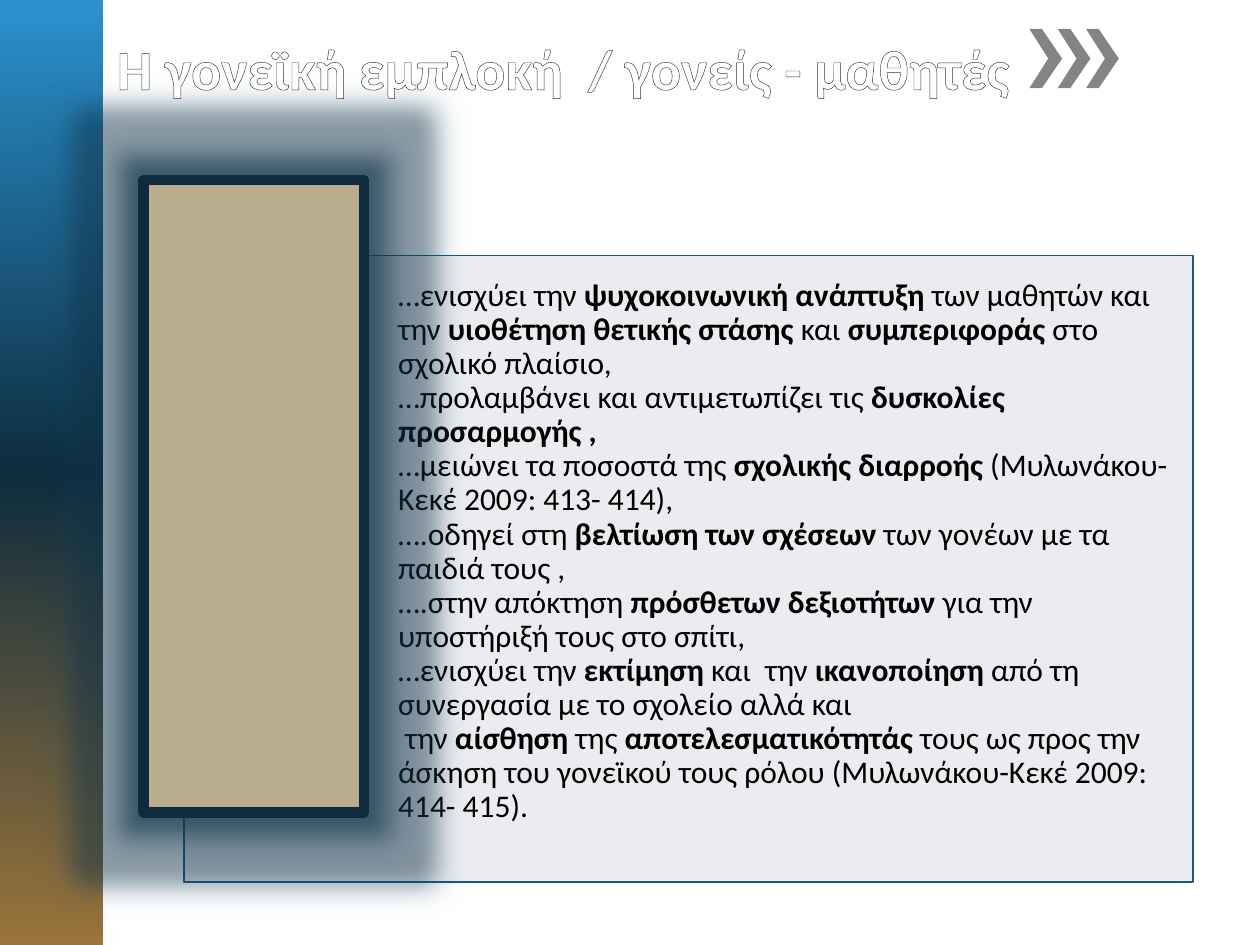
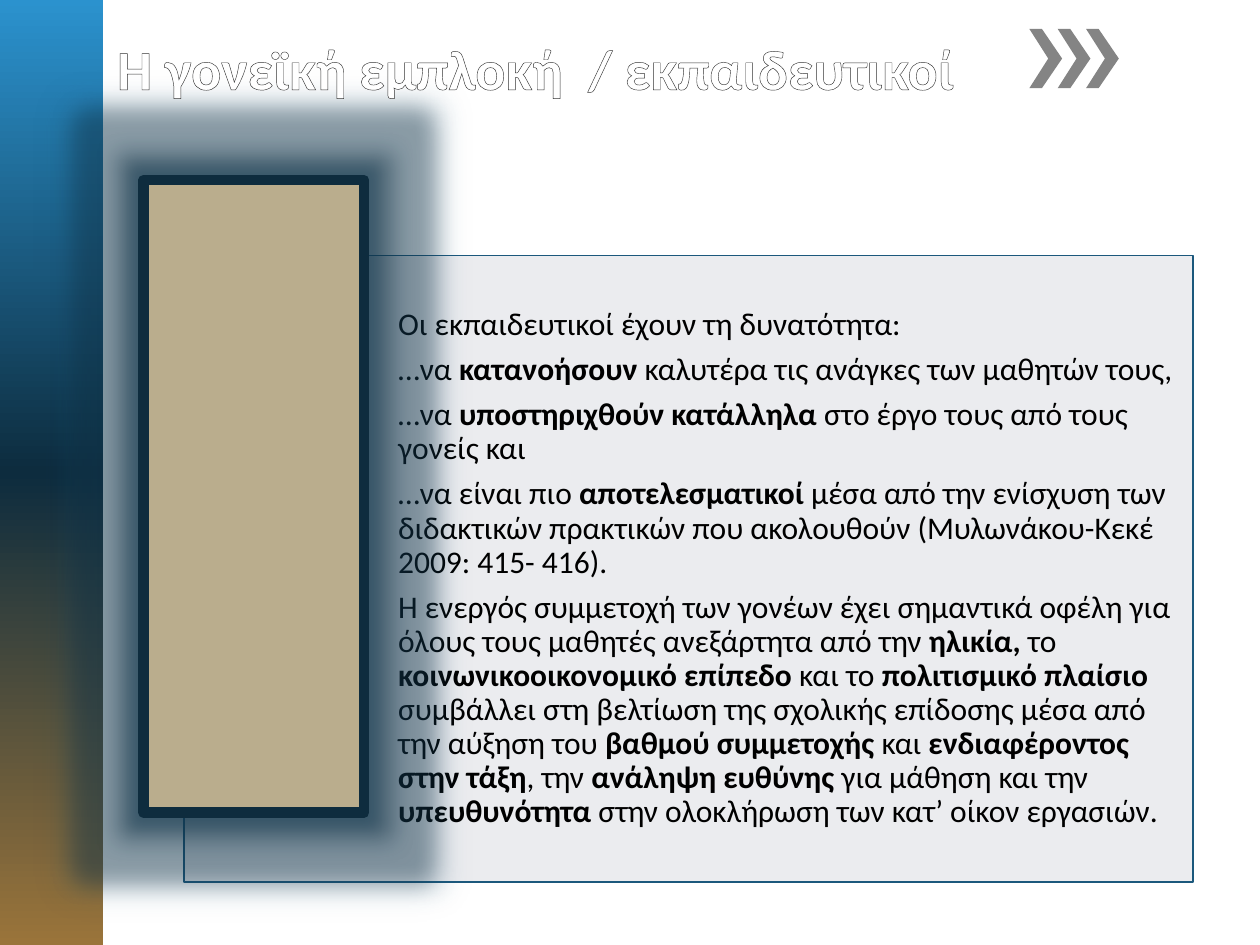
from copy import deepcopy

from lxml import etree
from pptx import Presentation
from pptx.dml.color import RGBColor
from pptx.enum.shapes import MSO_SHAPE as Shape
from pptx.enum.text import MSO_ANCHOR as Anchor, PP_ALIGN as Align
from pptx.oxml import parse_xml
from pptx.oxml.ns import nsdecls, qn
from pptx.util import Inches, Pt

# Text between ** marks is bold; a newline inside a paragraph is a line break.
SLIDES = [
    {
        "title": "Η γονεϊκή εμπλοκή  / γονείς - μαθητές",
        "title_width": 8.27,
        "bottom_inset": 0.34,
        "body": [
            "…ενισχύει την **ψυχοκοινωνική ανάπτυξη **των μαθητών και \n"
            "την **υιοθέτηση θετικής στάσης **και **συμπεριφοράς** στο σχολικό πλαίσιο, \n"
            "…προλαμβάνει και αντιμετωπίζει τις **δυσκολίες προσαρμογής ,**\n"
            "…μειώνει τα ποσοστά της **σχολικής διαρροής **"
            "(Μυλωνάκου- Κεκέ 2009: 413- 414),\n"
            "….οδηγεί στη **βελτίωση των σχέσεων **των γονέων με τα παιδιά τους ,\n"
            "….στην απόκτηση **πρόσθετων δεξιοτήτων **για την υποστήριξή τους στο σπίτι,\n"
            "…ενισχύει την **εκτίμηση** και  την **ικανοποίηση** από τη συνεργασία "
            "με το σχολείο αλλά και\n"
            " την **αίσθηση **της **αποτελεσματικότητάς** τους ως προς την άσκηση "
            "του γονεϊκού τους ρόλου (Μυλωνάκου-Κεκέ 2009: 414- 415).",
        ],
    },
    {
        "title": "Η γονεϊκή εμπλοκή  / εκπαιδευτικοί",
        "title_width": 8.11,
        "bottom_inset": 0.07,
        "body": [
            "Οι εκπαιδευτικοί έχουν τη δυνατότητα:",
            "…να **κατανοήσουν **καλυτέρα τις ανάγκες των μαθητών τους,",
            "…να **υποστηριχθούν κατάλληλα **στο έργο τους από τους γονείς και",
            "…να είναι πιο **αποτελεσματικοί **μέσα από την ενίσχυση των διδακτικών "
            "πρακτικών που ακολουθούν (Μυλωνάκου-Κεκέ 2009: 415- 416).",
            "Η ενεργός συμμετοχή των γονέων έχει σημαντικά οφέλη για όλους τους "
            "μαθητές ανεξάρτητα από την **ηλικία,** το **κοινωνικοοικονομικό επίπεδο **"
            "και το **πολιτισμικό πλαίσιο **συμβάλλει στη βελτίωση της σχολικής "
            "επίδοσης μέσα από την αύξηση του **βαθμού συμμετοχής **και "
            "**ενδιαφέροντος στην τάξη**, την **ανάληψη ευθύνης **για μάθηση και την "
            "**υπευθυνότητα** στην ολοκλήρωση των κατ’ οίκον εργασιών.",
        ],
    },
]

FONT = "Calibri"
WHITE = RGBColor(0xFF, 0xFF, 0xFF)
BLACK = RGBColor(0x00, 0x00, 0x00)
OUTLINE = RGBColor(0x32, 0x32, 0x32)
GREY = RGBColor(0x84, 0x84, 0x84)
PANEL = RGBColor(0xCD, 0xD1, 0xD7)
PANEL_LINE = RGBColor(0x1B, 0x58, 0x7C)
TAN = RGBColor(0xBA, 0xAD, 0x8D)
NAVY = RGBColor(0x0E, 0x2C, 0x3E)
BAND_STOPS = [
    (0, RGBColor(0x2B, 0x92, 0xCE)),
    (0.5, RGBColor(0x0D, 0x2C, 0x3E)),
    (1, RGBColor(0x9A, 0x74, 0x3A)),
]

CHEVRON_LEFT, CHEVRON_TOP, CHEVRON_STEP = 8.17, 0.23, 0.225
CHEVRON = [(0.1, 0), (0, 0), (0.15, 0.235), (0, 0.47), (0.1, 0.47), (0.26, 0.235)]


def add_rect(s, box, fill=None, line=None, line_width=0):
    sp = s.shapes.add_shape(Shape.RECTANGLE, *map(Inches, box))
    sp.shadow.inherit = False
    if fill is not None:
        sp.fill.solid()
        sp.fill.fore_color.rgb = fill
    if line is None:
        sp.line.fill.background()
    else:
        sp.line.color.rgb = line
        sp.line.width = Pt(line_width)
    return sp


def add_run(p, text, **font):
    r = p.add_run()
    r.text = text
    color = font.pop("color")
    for name, value in {"name": FONT, **font}.items():
        setattr(r.font, name, value)
    r.font.color.rgb = color
    return r


def add_band(s):
    band = add_rect(s, (0, 0, 0.82, 7.5))
    band.fill.gradient()
    band.fill.gradient_angle = 270
    stops = band.fill.gradient_stops
    stop_list = band._element.spPr.find(".//" + qn("a:gsLst"))
    stop_list.append(deepcopy(stop_list[-1]))
    for stop, (position, color) in zip(stops, BAND_STOPS):
        stop.position = position
        stop.color.rgb = color


def add_chevrons(s):
    for i in range(3):
        left = CHEVRON_LEFT + i * CHEVRON_STEP
        points = [(Inches(left + x), Inches(CHEVRON_TOP + y)) for x, y in CHEVRON]
        builder = s.shapes.build_freeform(*points[0])
        builder.add_line_segments(points[1:], close=True)
        sp = builder.convert_to_shape()
        sp.shadow.inherit = False
        sp.fill.solid()
        sp.fill.fore_color.rgb = GREY
        sp.line.fill.background()


def add_panel(s, body, bottom_inset):
    sp = add_rect(s, (1.46, 2.03, 8.01, 4.97), PANEL, PANEL_LINE, 0.75)
    color = sp._element.spPr.find(qn("a:solidFill"))[0]
    etree.SubElement(color, qn("a:alpha"), val="40000")
    tf = sp.text_frame
    frame = {"word_wrap": True, "vertical_anchor": Anchor.MIDDLE,
             "margin_left": Inches(1.7), "margin_right": Inches(0.07),
             "margin_top": Inches(0.07), "margin_bottom": Inches(bottom_inset)}
    for name, value in frame.items():
        setattr(tf, name, value)
    for i, text in enumerate(body):
        p = tf.add_paragraph() if i else tf.paragraphs[0]
        p.alignment = Align.LEFT
        p.line_spacing = 0.9
        p.space_after = Pt(6.3)
        for j, part in enumerate(text.split("**")):
            for k, line in enumerate(part.split("\n")):
                if k:
                    p.add_line_break()
                if line:
                    add_run(p, line, size=Pt(18), bold=j % 2 == 1, color=BLACK)


def add_glowing_frame(s):
    sp = add_rect(s, (1.14, 1.43, 1.75, 5.02), TAN, NAVY, 6)
    effects = sp._element.spPr.find(qn("a:effectLst"))
    effects.append(parse_xml(
        f'<a:glow {nsdecls("a")} rad="{Inches(0.35)}"><a:srgbClr val="{NAVY}">'
        '<a:alpha val="40000"/></a:srgbClr></a:glow>'))
    effects.append(parse_xml(
        f'<a:outerShdw {nsdecls("a")} blurRad="{Inches(0.12)}" dist="0" '
        f'sx="107000" sy="103000" algn="ctr"><a:srgbClr val="{PANEL_LINE}">'
        '<a:alpha val="50000"/></a:srgbClr></a:outerShdw>'))


def add_title(s, text, width):
    sp = s.shapes.add_textbox(*map(Inches, (0.83, 0.22, width, 1.04)))
    sp.text_frame.word_wrap = True
    r = add_run(sp.text_frame.paragraphs[0], text, size=Pt(32), bold=True, color=WHITE)
    r.font._element.insert(0, parse_xml(
        f'<a:ln {nsdecls("a")} w="{Pt(1)}"><a:solidFill>'
        f'<a:srgbClr val="{OUTLINE}"/></a:solidFill></a:ln>'))


def main():
    prs = Presentation()
    prs.slide_width, prs.slide_height = Inches(10), Inches(7.5)
    for content in SLIDES:
        s = prs.slides.add_slide(prs.slide_layouts[6])
        add_band(s)
        add_chevrons(s)
        add_panel(s, content["body"], content["bottom_inset"])
        add_glowing_frame(s)
        add_title(s, content["title"], content["title_width"])
    prs.save("out.pptx")


if __name__ == "__main__":
    main()
